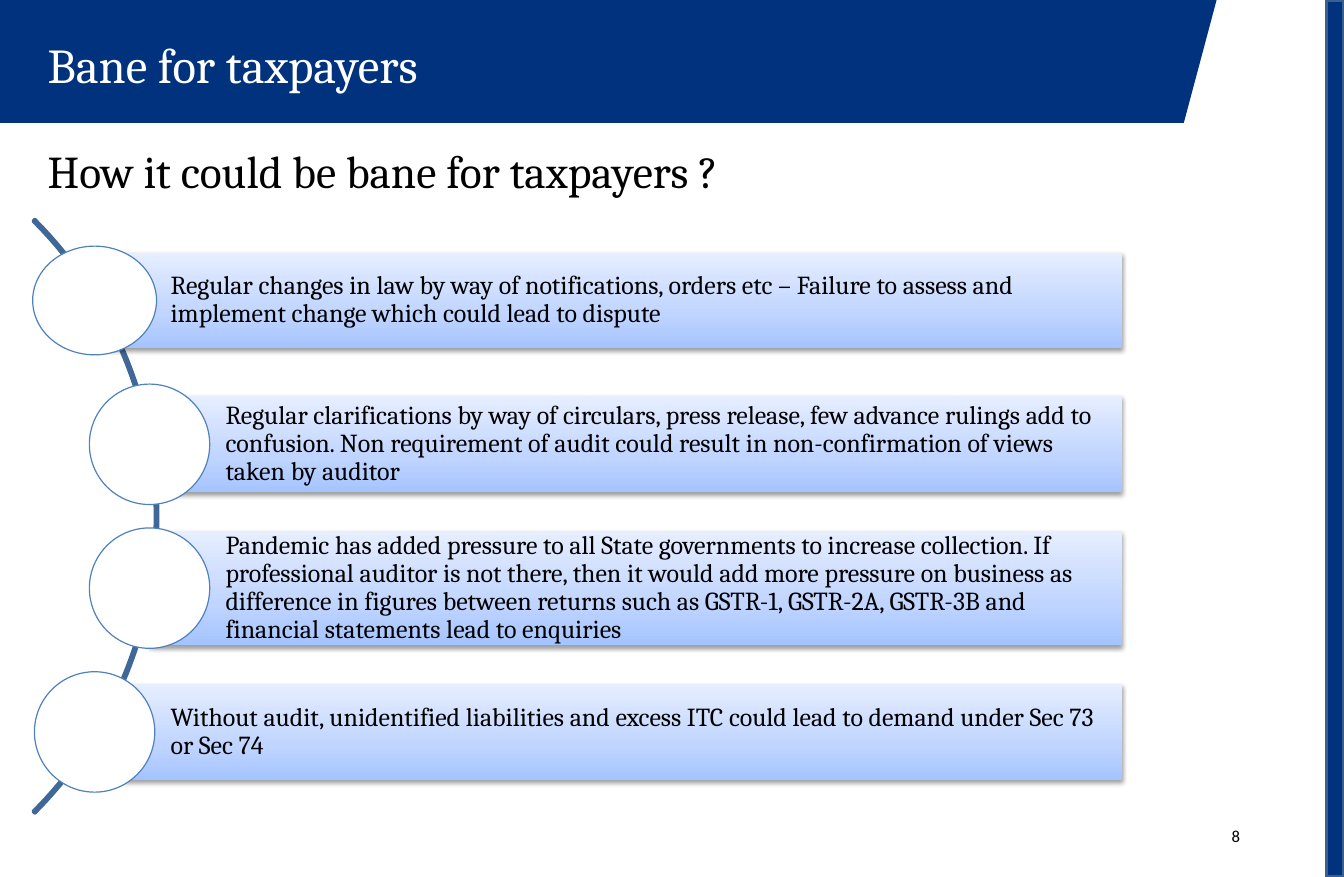
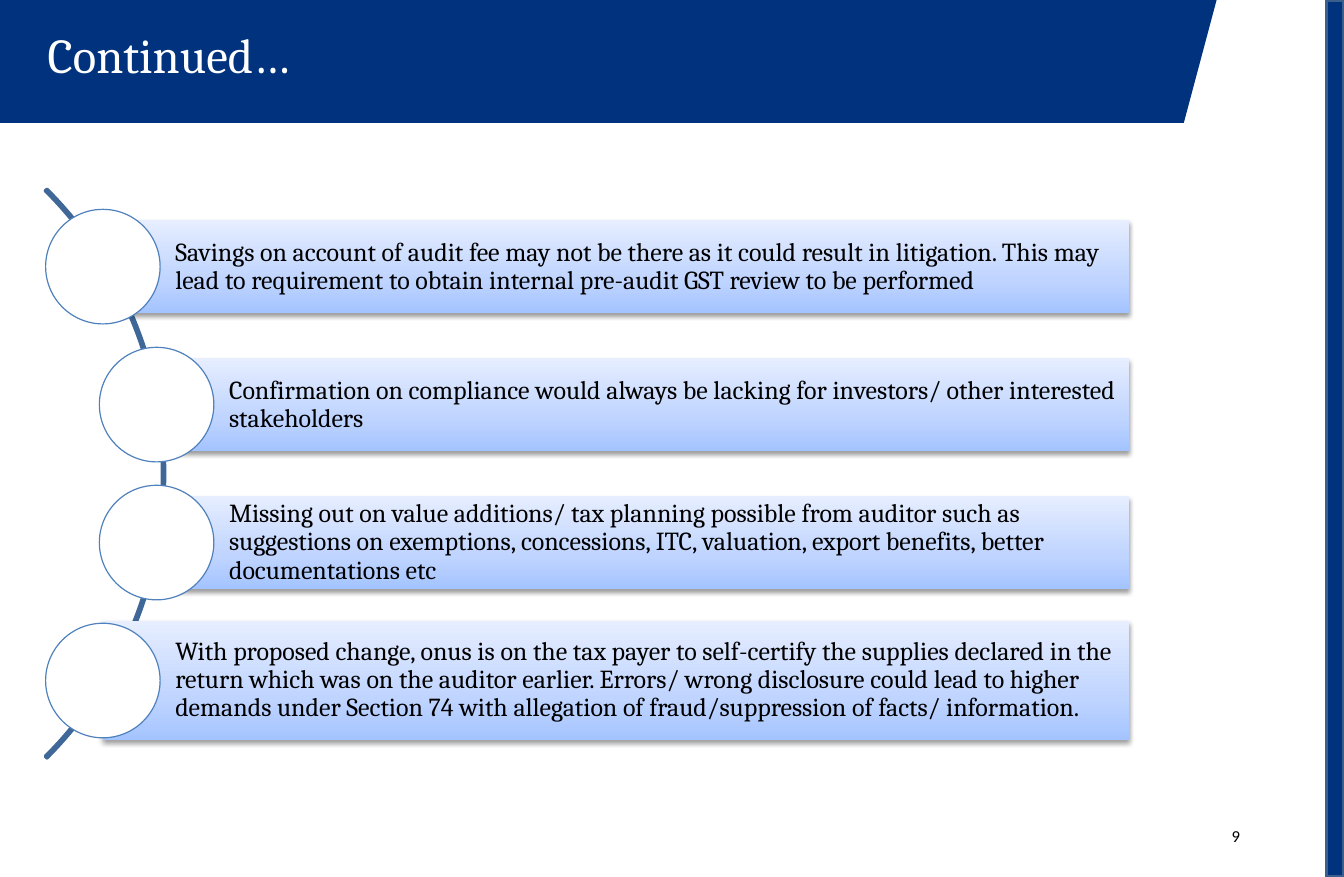
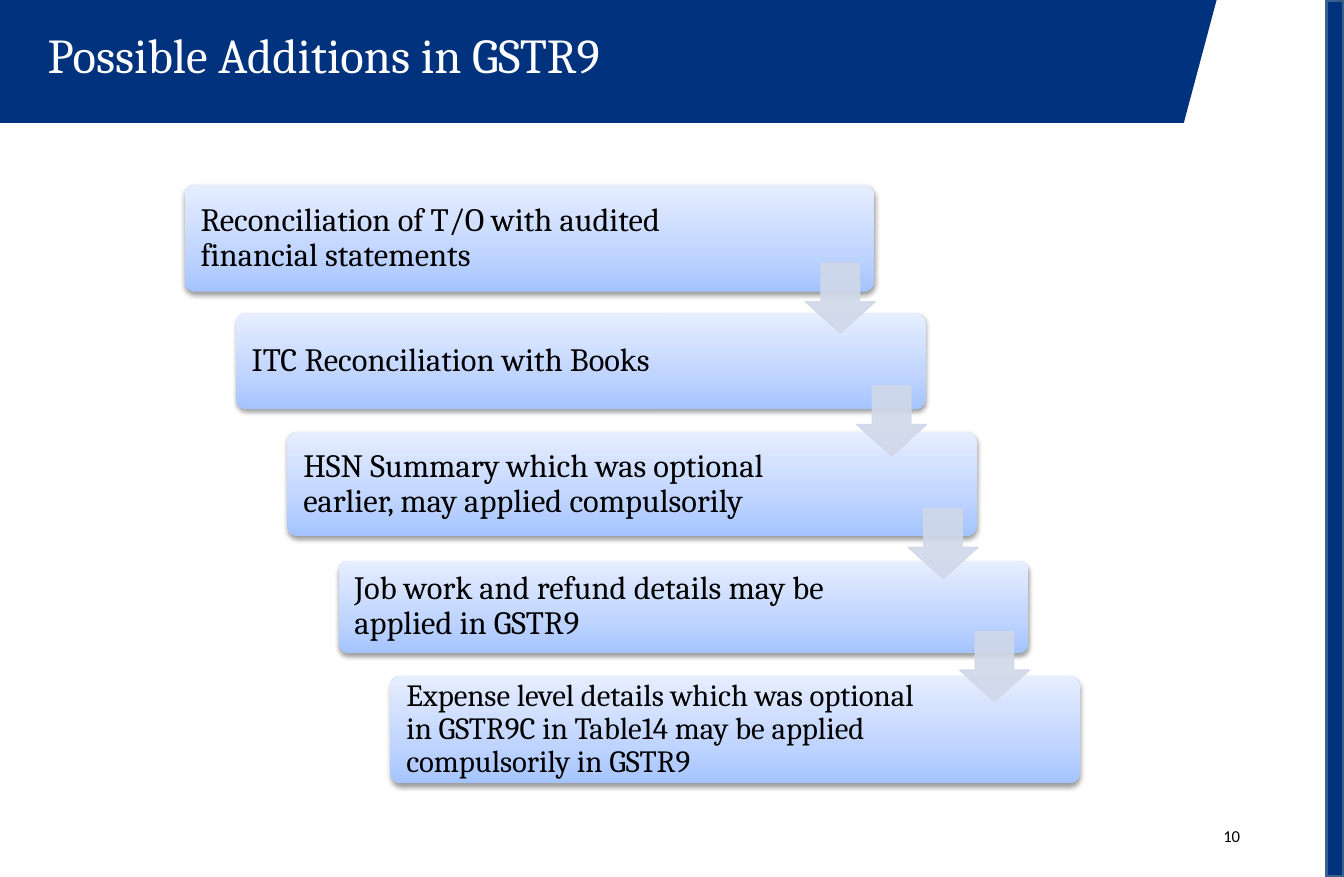
"""Build three slides on the effects of the GST audit change."""
import pptx
import pptx.dml.color
import pptx.enum.shapes
import pptx.enum.text
import pptx.oxml
import pptx.oxml.ns
import pptx.util

Inches, Pt = pptx.util.Inches, pptx.util.Pt
SHAPE = pptx.enum.shapes.MSO_SHAPE
ANCHOR = pptx.enum.text.MSO_ANCHOR
ALIGN = pptx.enum.text.PP_ALIGN

COLORS = {
    "navy": "00327D", "edge": "3A5F8C", "arc": "3F6797", "ring": "4F81BD",
    "arrow": "D0D8E8", "white": "FFFFFF", "black": "000000",
    "bar_low": "A4C4FF", "bar_mid": "BFD4FF", "bar_high": "E6EEFF",
}
BAR_STOPS = [(0, "bar_low"), (35, "bar_mid"), (100, "bar_high")]

ARC_LISTS = [
    {
        "number": "8", "title": "Bane for taxpayers", "title_top": 0.25,
        "heading": "How it could be bane for taxpayers ?",
        "arc": (-2.24, 7.18), "centers_x": (0.81, 1.28), "first_y": 2.57, "pitch": 1.23,
        "right": 9.6, "circle": 1.03, "inset": 0.65,
        "items": [
            ("Regular changes in law by way of notifications, orders etc – Failure to assess and "
             "implement change which could lead to dispute", 0.82, (1.06, 0.93)),
            ("Regular clarifications by way of circulars, press release, few advance rulings add to "
             "confusion. Non requirement of audit could result in non-confirmation of views taken "
             "by auditor", 0.82, None),
            ("Pandemic has added pressure to all State governments to increase collection. If "
             "professional auditor is not there, then it would add more pressure on business as "
             "difference in figures between returns such as GSTR-1, GSTR-2A, GSTR-3B and financial "
             "statements lead to enquiries", 0.97, None),
            ("Without audit, unidentified liabilities and excess ITC could lead to demand under "
             "Sec 73 or Sec 74", 0.82, None),
        ],
    },
    {
        "number": "9", "title": "Continued…", "title_top": 0.16, "heading": None,
        "arc": (-2.03, 6.88), "centers_x": (0.88, 1.34), "first_y": 2.28, "pitch": 1.18,
        "right": 9.66, "circle": 0.98, "inset": 0.62,
        "items": [
            ("Savings on account of audit fee may not be there as it could result in litigation. "
             "This may lead to requirement to obtain internal pre-audit GST review to be performed",
             0.79, None),
            ("Confirmation on compliance would always be lacking for investors/ other interested "
             "stakeholders", 0.79, None),
            ("Missing out on value additions/ tax planning possible from auditor such as "
             "suggestions on exemptions, concessions, ITC, valuation, export benefits, better "
             "documentations etc", 0.79, None),
            ("With proposed change, onus is on the tax payer to self-certify the supplies declared "
             "in the return which was on the auditor earlier. Errors/ wrong disclosure could lead "
             "to higher demands under Section 74 with allegation of fraud/suppression of facts/ "
             "information.", 1.02, None),
        ],
    },
]
STEPS = {
    "number": "10", "title": "Possible Additions in GSTR9", "title_top": 0.16,
    "items": [
        ("Reconciliation of T/O with audited financial statements", 0.91, 20),
        ("ITC Reconciliation with Books", 0.82, 20),
        ("HSN Summary which was optional earlier, may applied compulsorily", 0.89, 20),
        ("Job work and refund details may be applied in GSTR9", 0.79, 20),
        ("Expense level details which was optional in GSTR9C in Table14 may be applied "
         "compulsorily in GSTR9", 0.92, 19),
    ],
}


def rgb(name):
    return pptx.dml.color.RGBColor.from_string(COLORS[name])


def xml(text):
    return pptx.oxml.parse_xml(text.replace(">", f" {pptx.oxml.ns.nsdecls('a')}>", 1))


def paint(sp, fill=None, line=None, weight=0.75):
    sp.shadow.inherit = False
    for part, color in ((sp.fill, fill), (sp.line.fill, line)):
        if color:
            part.solid()
            part.fore_color.rgb = rgb(color)
        else:
            part.background()
    if line:
        sp.line.width = Pt(weight)


def add_shape(s, kind, left, top, width, height, **style):
    sp = s.shapes.add_shape(kind, Inches(left), Inches(top), Inches(width), Inches(height))
    paint(sp, **style)
    return sp


def write(sp, text, size, color="black", font="Cambria", insets=(0.1, 0.05, 0.1, 0.05),
          anchor=ANCHOR.TOP, align=ALIGN.LEFT, spacing=None):
    tf = sp.text_frame
    tf.word_wrap = True
    tf.vertical_anchor = anchor
    tf.margin_left, tf.margin_top, tf.margin_right, tf.margin_bottom = map(Inches, insets)
    p = tf.paragraphs[0]
    p.alignment = align
    p.line_spacing = spacing
    r = p.add_run()
    r.text = text
    r.font.name, r.font.size, r.font.color.rgb = font, Pt(size), rgb(color)


def add_text(s, left, top, width, height, text, size, **style):
    sp = s.shapes.add_textbox(Inches(left), Inches(top), Inches(width), Inches(height))
    write(sp, text, size, **style)


def add_bar(s, kind, left, center_y, width, height, text, size, insets):
    sp = add_shape(s, kind, left, center_y - height / 2, width, height)
    stops = "".join(f'<a:gs pos="{pos * 1000}"><a:srgbClr val="{COLORS[name]}"/></a:gs>'
                    for pos, name in BAR_STOPS)
    props = sp._element.spPr
    props.replace(props.find(pptx.oxml.ns.qn("a:noFill")), xml(
        f'<a:gradFill rotWithShape="1"><a:gsLst>{stops}</a:gsLst>'
        '<a:lin ang="16200000" scaled="0"/></a:gradFill>'))
    props.find(pptx.oxml.ns.qn("a:effectLst")).append(xml(
        f'<a:outerShdw blurRad="{Pt(3.1)}" dist="{Pt(1.6)}" dir="5400000" rotWithShape="0">'
        f'<a:srgbClr val="{COLORS["black"]}"><a:alpha val="38000"/></a:srgbClr></a:outerShdw>'))
    write(sp, text, size, insets=insets, anchor=ANCHOR.MIDDLE, spacing=0.9)
    return sp


def add_base(prs, content):
    s = prs.slides.add_slide(prs.slide_layouts[6])
    outline = [(Inches(x), Inches(y)) for x, y in ((0, 0), (0, 1.05), (10.13, 1.05), (10.41, 0))]
    band = s.shapes.build_freeform(*outline[0])
    band.add_line_segments(outline[1:], close=True)
    paint(band.convert_to_shape(), fill="navy")
    add_shape(s, SHAPE.RECTANGLE, 11.35, 0, 0.15, 7.5, fill="navy", line="edge", weight=2)
    add_text(s, 0.31, content["title_top"], 9.94, 0.64, content["title"], 30, color="white")
    add_text(s, 8.12, 6.95, 2.59, 0.4, content["number"], 10.3, font="Calibri",
             anchor=ANCHOR.MIDDLE, align=ALIGN.RIGHT)
    return s


def add_arc_list(prs, content):
    s = add_base(prs, content)
    if content["heading"]:
        add_text(s, 0.31, 1.17, 10.99, 0.64, content["heading"], 28)
    items, first_y, pitch = content["items"], content["first_y"], content["pitch"]
    arc_x, diameter = content["arc"]
    arc_y = first_y + pitch * (len(items) - 1) / 2
    arc = add_shape(s, SHAPE.BLOCK_ARC, arc_x - diameter / 2, arc_y - diameter / 2,
                    diameter, diameter, line="arc", weight=2)
    for i, value in enumerate((189, 27, 0.003)):
        arc.adjustments[i] = value
    outer, inner = content["centers_x"]
    for i, (text, height, oval) in enumerate(items):
        x = outer if i in (0, len(items) - 1) else inner
        y = first_y + pitch * i
        add_bar(s, SHAPE.RECTANGLE, x, y, content["right"] - x, height, text, 16,
                (content["inset"], 0.04, 0.04, 0.04))
        w, h = oval or (content["circle"], content["circle"])
        add_shape(s, SHAPE.OVAL, x - w / 2, y - h / 2, w, h, fill="white", line="ring")


def add_steps(prs, content):
    s = add_base(prs, content)
    spots = [(1.58 + 0.44 * i, 2.04 + 1.05 * i) for i in range(len(content["items"]))]
    for (x, y), (text, height, size) in zip(spots, content["items"]):
        bar = add_bar(s, SHAPE.ROUNDED_RECTANGLE, x, y, 5.9, height, text, size,
                      (0.11, 0.1, 1.15, 0.1))
        bar.adjustments[0] = 0.1
    for x, y in spots[:-1]:
        arrow = add_shape(s, SHAPE.DOWN_ARROW, x + 5.31, y + 0.21, 0.6, 0.6,
                          fill="arrow", line="arrow")
        arrow.adjustments[0], arrow.adjustments[1] = 0.55, 0.45
        for color in arrow._element.spPr.iter(pptx.oxml.ns.qn("a:srgbClr")):
            color.append(xml('<a:alpha val="90000"></a:alpha>'))


def main():
    prs = pptx.Presentation()
    prs.slide_width, prs.slide_height = Inches(11.5), Inches(7.5)
    for content in ARC_LISTS:
        add_arc_list(prs, content)
    add_steps(prs, STEPS)
    prs.save("out.pptx")


if __name__ == "__main__":
    main()
